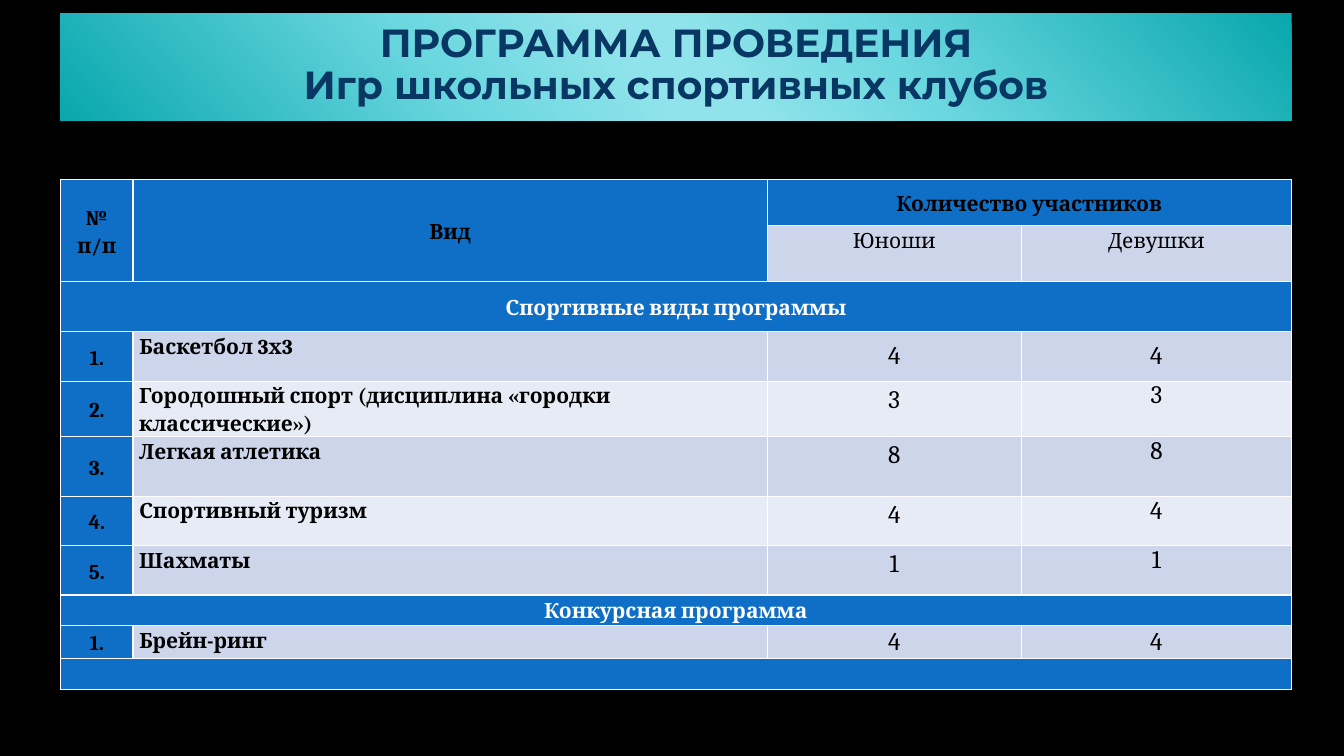
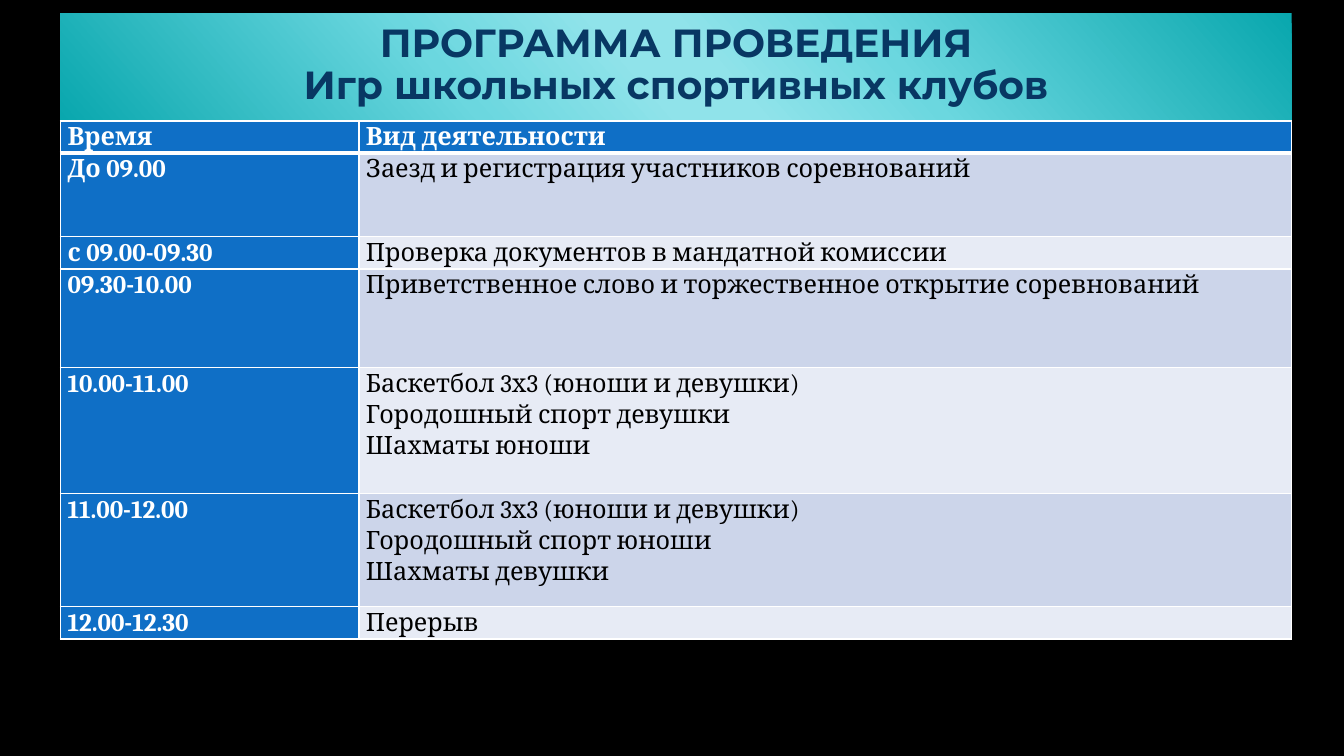
import pptx
import pptx.dml.color
import pptx.enum.text
import pptx.oxml
import pptx.oxml.ns
import pptx.util
from pptx.util import Inches

RGBColor = pptx.dml.color.RGBColor
LEFT = pptx.enum.text.PP_ALIGN.LEFT
CENTER = pptx.enum.text.PP_ALIGN.CENTER
TOP = pptx.enum.text.MSO_ANCHOR.TOP
MIDDLE = pptx.enum.text.MSO_ANCHOR.MIDDLE

BLACK = RGBColor(0x00, 0x00, 0x00)
WHITE = RGBColor(0xFF, 0xFF, 0xFF)
NAVY = RGBColor(0x08, 0x37, 0x63)
BLUE = RGBColor(0x0F, 0x6F, 0xC6)
BAND_DARK = RGBColor(0xCC, 0xD5, 0xEA)
BAND_LIGHT = RGBColor(0xE7, 0xEB, 0xF5)
TEAL = RGBColor(0x09, 0xA7, 0xAE)
AQUA = RGBColor(0x6B, 0xD7, 0xDF)
PALE_AQUA = RGBColor(0x90, 0xE3, 0xEA)
TITLE_STOPS = [(0, TEAL), (33, AQUA), (47, PALE_AQUA),
               (53, PALE_AQUA), (68, AQUA), (100, TEAL)]

TITLE_FONT = "Montserrat"
TABLE_FONT = "Cambria"
TITLE_LINES = ["ПРОГРАММА ПРОВЕДЕНИЯ", "Игр школьных спортивных клубов"]
TITLE_BOX = (0.6, 0.13, 12.21, 1.07)

SPORTS = [
    ("1.", "Баскетбол 3х3", "4", 0.49),
    ("2.", "Городошный спорт (дисциплина «городки классические»)", "3", 0.55),
    ("3.", "Легкая атлетика", "8", 0.59),
    ("4.", "Спортивный туризм", "4", 0.49),
    ("5.", "Шахматы", "1", 0.49),
]

SCHEDULE = [
    ("Время", ["Вид деятельности"], 0.32),
    ("До 09.00", ["Заезд и регистрация участников соревнований"], 0.83),
    ("с 09.00-09.30", ["Проверка документов в мандатной комиссии"], 0.32),
    ("09.30-10.00",
     ["Приветственное слово и торжественное открытие соревнований"], 0.98),
    ("10.00-11.00", ["Баскетбол 3х3 (юноши и девушки)",
                     "Городошный спорт девушки", "Шахматы юноши"], 1.25),
    ("11.00-12.00", ["Баскетбол 3х3 (юноши и девушки)",
                     "Городошный спорт юноши", "Шахматы девушки"], 1.12),
    ("12.00-12.30", ["Перерыв"], 0.32),
]


def write_lines(text_frame, lines, font_name, size, color, bold, align, spacing):
    """Write one paragraph per line with a single text style."""
    for index, line in enumerate(lines):
        paragraph = text_frame.paragraphs[0] if index == 0 else text_frame.add_paragraph()
        paragraph.alignment = align
        paragraph.line_spacing = spacing
        run = paragraph.add_run()
        run.text = line
        run.font.name = font_name
        run.font.size = pptx.util.Pt(size)
        run.font.bold = bold
        run.font.color.rgb = color


def fill_gradient(fill, stops, angle):
    """Fill with a linear gradient of any number of stops."""
    fill.gradient()
    fill.gradient_angle = angle
    stop_list = fill._xPr.find(".//" + pptx.oxml.ns.qn("a:gsLst"))
    for old_stop in list(stop_list):
        stop_list.remove(old_stop)
    for position, color in stops:
        stop_list.append(pptx.oxml.parse_xml(
            f'<a:gs {pptx.oxml.ns.nsdecls("a")} pos="{position * 1000}">'
            f'<a:srgbClr val="{color}"/></a:gs>'))


def add_titled_slide(presentation):
    """Add a slide with the shared gradient title band."""
    slide = presentation.slides.add_slide(presentation.slide_layouts[5])
    title = slide.shapes.title
    title.left, title.top, title.width, title.height = map(Inches, TITLE_BOX)
    fill_gradient(title.fill, TITLE_STOPS, 221)
    text_frame = title.text_frame
    text_frame.auto_size = pptx.enum.text.MSO_AUTO_SIZE.NONE
    text_frame.vertical_anchor = MIDDLE
    text_frame.margin_top = Inches(0.05)
    text_frame.margin_bottom = Inches(0.07)
    write_lines(text_frame, TITLE_LINES, TITLE_FONT, 28, NAVY, True, CENTER, 0.9)
    return slide


def set_borders(cell, top=1, bottom=1):
    """Draw white borders, with widths in points, around a cell."""
    properties = cell._tc.get_or_add_tcPr()
    widths = [("lnL", 1), ("lnR", 1), ("lnT", top), ("lnB", bottom)]
    for index, (tag, width) in enumerate(widths):
        properties.insert(index, pptx.oxml.parse_xml(
            f'<a:{tag} {pptx.oxml.ns.nsdecls("a")} w="{width * 12700}">'
            f'<a:solidFill><a:srgbClr val="{WHITE}"/></a:solidFill></a:{tag}>'))


def add_grid(slide, left, top, column_widths, row_heights, inset):
    """Add a blue table with white borders and the given column and row sizes."""
    table = slide.shapes.add_table(
        len(row_heights), len(column_widths), Inches(left), Inches(top),
        Inches(sum(column_widths)), Inches(sum(row_heights))).table
    table.first_row = table.horz_banding = False
    for column, width in zip(table.columns, column_widths):
        column.width = Inches(width)
    for row, height in zip(table.rows, row_heights):
        row.height = Inches(height)
    for cell in table.iter_cells():
        cell.margin_left = cell.margin_right = Inches(inset)
        cell.margin_top = cell.margin_bottom = 0
        cell.fill.solid()
        cell.fill.fore_color.rgb = BLUE
        set_borders(cell)
    return table


def write_cell(cell, lines, size=15, color=BLACK, bold=True, align=CENTER,
               spacing=1.15, anchor=MIDDLE, fill=BLUE):
    """Fill a table cell and write its text."""
    cell.fill.fore_color.rgb = fill
    cell.vertical_anchor = anchor
    write_lines(cell.text_frame, lines, TABLE_FONT, size, color, bold, align, spacing)


def write_event(table, row, number, name, count, fill, name_anchor, count_anchor):
    """Write one event row with equal counts of boys and girls."""
    write_cell(table.cell(row, 0), [number])
    write_cell(table.cell(row, 1), [name], align=LEFT, anchor=name_anchor,
               fill=fill, spacing=1.15 if name_anchor == TOP else 1.0)
    boys_spacing = 1.15 if count_anchor == TOP else 1.0
    for column, spacing in ((2, boys_spacing), (3, 1.0)):
        write_cell(table.cell(row, column), [count], size=18, bold=False,
                   spacing=spacing, anchor=count_anchor, fill=fill)


def add_events_table(slide, left, top):
    """Add the table of events and numbers of participants."""
    heights = [0.46, 0.55, 0.5] + [sport[3] for sport in SPORTS] + [0.3, 0.33, 0.3]
    table = add_grid(slide, left, top, [0.72, 6.29, 2.52, 2.68], heights, 0.06)
    contest_row = 3 + len(SPORTS)
    last_row = len(heights) - 1
    for column in (0, 1):
        table.cell(0, column).merge(table.cell(1, column))
    table.cell(0, 2).merge(table.cell(0, 3))
    for row in (2, contest_row, last_row):
        table.cell(row, 0).merge(table.cell(row, 3))
    for column, heading in enumerate(["№ п/п", "Вид", "Количество участников"]):
        write_cell(table.cell(0, column), [heading])
    for column, heading in ((2, "Юноши"), (3, "Девушки")):
        write_cell(table.cell(1, column), [heading], bold=False, anchor=TOP, fill=BAND_DARK)
    for row, heading in ((2, "Спортивные виды программы"),
                         (contest_row, "Конкурсная программа")):
        write_cell(table.cell(row, 0), [heading], color=WHITE)
    for index, (number, name, count, _) in enumerate(SPORTS):
        write_event(table, 3 + index, number, name, count,
                    BAND_LIGHT if index % 2 else BAND_DARK,
                    TOP, TOP if index else MIDDLE)
    write_event(table, contest_row + 1, "1.", "Брейн-ринг", "4", BAND_DARK, MIDDLE, MIDDLE)


def add_schedule_table(slide, left, top):
    """Add the timetable of the day."""
    heights = [height for _, _, height in SCHEDULE]
    table = add_grid(slide, left, top, [2.96, 9.25], heights, 0.07)
    style = dict(size=18, align=LEFT, spacing=1.07, anchor=TOP)
    for row, (time, activities, _) in enumerate(SCHEDULE):
        write_cell(table.cell(row, 0), [time], color=WHITE, **style)
        if row == 0:
            write_cell(table.cell(row, 1), activities, color=WHITE, **style)
        else:
            write_cell(table.cell(row, 1), activities, bold=False,
                       fill=BAND_DARK if row % 2 else BAND_LIGHT, **style)
    for column in (0, 1):
        for row, edge in ((0, "lnB"), (1, "lnT")):
            properties = table.cell(row, column)._tc.tcPr
            properties.find(pptx.oxml.ns.qn("a:" + edge)).set("w", str(3 * 12700))


def main():
    """Build and save the presentation."""
    presentation = pptx.Presentation()
    presentation.slide_width = Inches(13.33)
    presentation.slide_height = Inches(7.5)
    background = presentation.slide_master.background.fill
    background.solid()
    background.fore_color.rgb = BLACK
    add_events_table(add_titled_slide(presentation), 0.6, 1.78)
    add_schedule_table(add_titled_slide(presentation), 0.6, 1.2)
    presentation.save("out.pptx")


if __name__ == "__main__":
    main()
